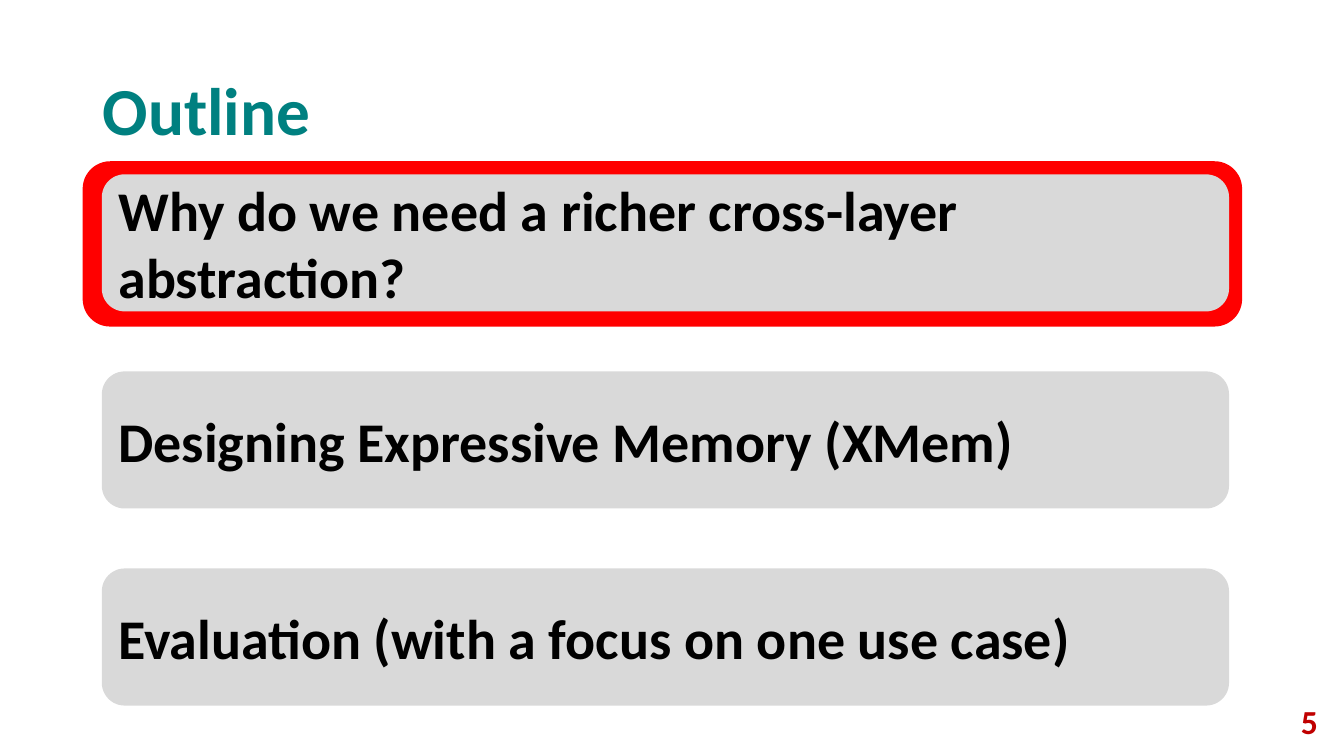
"""Build an outline slide with its first topic highlighted."""
from pptx import Presentation
from pptx import util as u
from pptx.dml.color import RGBColor
from pptx.enum import shapes, text

TITLE = "Outline"
TOPICS = [
    "Why do we need a richer cross-layer abstraction?",
    "Designing Expressive Memory (XMem)",
    "Evaluation (with a focus on one use case)",
]
PAGE_NUMBER = "5"

THEME = {
    "font": "Calibri",
    "title": "008080",
    "topic": "000000",
    "number": "C00000",
    "panel": "D9D9D9",
    "highlight": "FF0000",
    "title_size": 48,
    "topic_size": 40,
    "number_size": 24,
}

TITLE_BOX = (0.92, 0.4, 11.5, 1.45)
NUMBER_BOX = (9.42, 6.95, 3.75, 0.4)
HIGHLIGHT_BOX = (0.82, 1.6, 11.5, 1.64)
PANEL_LEFT, PANEL_TOP, PANEL_WIDTH, PANEL_HEIGHT = 1.01, 1.73, 11.18, 1.36
PANEL_PITCH = 1.955


def write(shape, content, *, size, color, align=text.PP_ALIGN.LEFT, spacing=1.0):
    frame = shape.text_frame
    frame.word_wrap = True
    frame.vertical_anchor = text.MSO_ANCHOR.MIDDLE
    paragraph = frame.paragraphs[0]
    paragraph.alignment = align
    paragraph.line_spacing = spacing
    run = paragraph.add_run()
    run.text = content
    run.font.name = THEME["font"]
    run.font.size = u.Pt(size)
    run.font.bold = True
    run.font.color.rgb = RGBColor.from_string(color)


def add_panel(slide, box, color):
    shape = slide.shapes.add_shape(
        shapes.MSO_SHAPE.ROUNDED_RECTANGLE, *map(u.Inches, box))
    shape.shadow.inherit = False
    shape.fill.solid()
    shape.fill.fore_color.rgb = RGBColor.from_string(color)
    shape.line.fill.background()
    return shape


def add_label(slide, box, content, **style):
    write(slide.shapes.add_textbox(*map(u.Inches, box)), content, **style)


def main():
    presentation = Presentation()
    presentation.slide_width = u.Inches(13.33)
    presentation.slide_height = u.Inches(7.5)
    slide = presentation.slides.add_slide(presentation.slide_layouts[6])

    add_panel(slide, HIGHLIGHT_BOX, THEME["highlight"])
    add_label(slide, TITLE_BOX, TITLE, size=THEME["title_size"],
              color=THEME["title"], spacing=0.9)
    add_label(slide, NUMBER_BOX, PAGE_NUMBER, size=THEME["number_size"],
              color=THEME["number"], align=text.PP_ALIGN.RIGHT)
    for index, topic in enumerate(TOPICS):
        top = PANEL_TOP + index * PANEL_PITCH
        panel = add_panel(
            slide, (PANEL_LEFT, top, PANEL_WIDTH, PANEL_HEIGHT), THEME["panel"])
        write(panel, topic, size=THEME["topic_size"], color=THEME["topic"])

    presentation.save("out.pptx")


if __name__ == "__main__":
    main()
